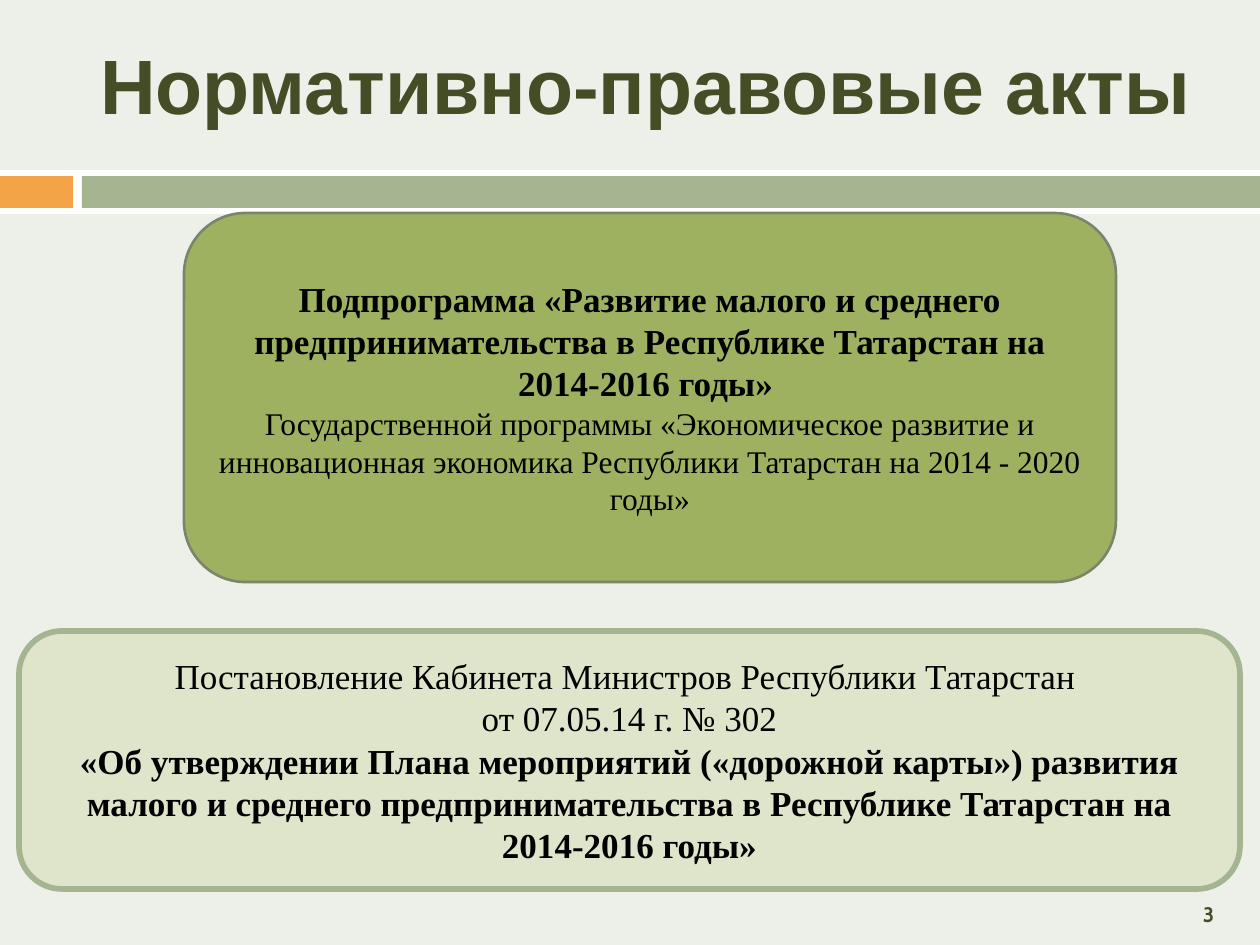
from pptx import Presentation
from pptx.dml.color import RGBColor
from pptx.enum.shapes import MSO_SHAPE as Shape
from pptx.enum.text import MSO_ANCHOR as Anchor, PP_ALIGN as Align
from pptx.util import Emu, Pt

PX = 914400 / 126
OLIVE, SAGE, BLACK = "444D26", "A5B592", "000000"
SERIF = "Times New Roman"


def color(value):
    return RGBColor.from_string(value)


def px(*lengths):
    return [Emu(round(length * PX)) for length in lengths]


deck = Presentation()
deck.slide_width, deck.slide_height = px(1260, 945)
page = deck.slides.add_slide(deck.slide_layouts[5])
page.background.fill.solid()
page.background.fill.fore_color.rgb = color("EDF0E9")

# Header band
for left, top, width, height, fill in [
    (0, 170, 1260, 44, "FFFFFF"),
    (0, 176, 73, 32, "F3A447"),
    (82, 176, 1178, 32, SAGE),
]:
    band = page.shapes.add_shape(Shape.RECTANGLE, *px(left, top, width, height))
    band.shadow.inherit = False
    band.fill.solid()
    band.fill.fore_color.rgb = color(fill)
    band.line.fill.background()

# Title and page number
title = page.shapes.title
title.left, title.top, title.width, title.height = px(84, 16, 1124, 136)
number = page.shapes.add_textbox(*px(1172, 890, 73, 49))
for box, text, font, size in [
    (title, "Нормативно-правовые акты", "Arial", 44),
    (number, "3", "Cabin", 12),
]:
    frame = box.text_frame
    frame.text = text
    frame.word_wrap = True
    frame.vertical_anchor = Anchor.MIDDLE
    para = frame.paragraphs[0]
    para.alignment = Align.CENTER
    para.font.name, para.font.size, para.font.bold = font, Pt(size), True
    para.font.color.rgb = color(OLIVE)

# Legal acts: position, fill, line, line width, paragraphs (text, size, bold)
acts = [
    ((19, 631, 1221, 258), "DFE5CA", SAGE, 3.25, [
        ("Постановление Кабинета Министров Республики Татарстан ", 20, False),
        ("от 07.05.14 г. № 302", 20, False),
        ("«Об утверждении Плана мероприятий («дорожной карты») развития малого и "
         "среднего предпринимательства в Республике Татарстан на 2014-2016 годы»", 20, True),
    ]),
    ((184, 213, 932, 369), "9EB160", "7A866C", 1.5, [
        ("Подпрограмма «Развитие малого и среднего предпринимательства "
         "в Республике Татарстан на 2014-2016 годы» ", 20, True),
        ("Государственной программы «Экономическое развитие и инновационная "
         "экономика Республики Татарстан на 2014 - 2020 годы»", 18, False),
    ]),
]
for place, fill, line, line_width, paragraphs in acts:
    act = page.shapes.add_shape(Shape.ROUNDED_RECTANGLE, *px(*place))
    act.shadow.inherit = False
    act.fill.solid()
    act.fill.fore_color.rgb = color(fill)
    act.line.color.rgb = color(line)
    act.line.width = Pt(line_width)
    frame = act.text_frame
    frame.word_wrap = True
    frame.vertical_anchor = Anchor.MIDDLE
    frame.text = "\n".join(text for text, size, bold in paragraphs)
    for para, (text, size, bold) in zip(frame.paragraphs, paragraphs):
        para.alignment = Align.CENTER
        para.font.name, para.font.size, para.font.bold = SERIF, Pt(size), bold
        para.font.color.rgb = color(BLACK)

deck.save("out.pptx")
